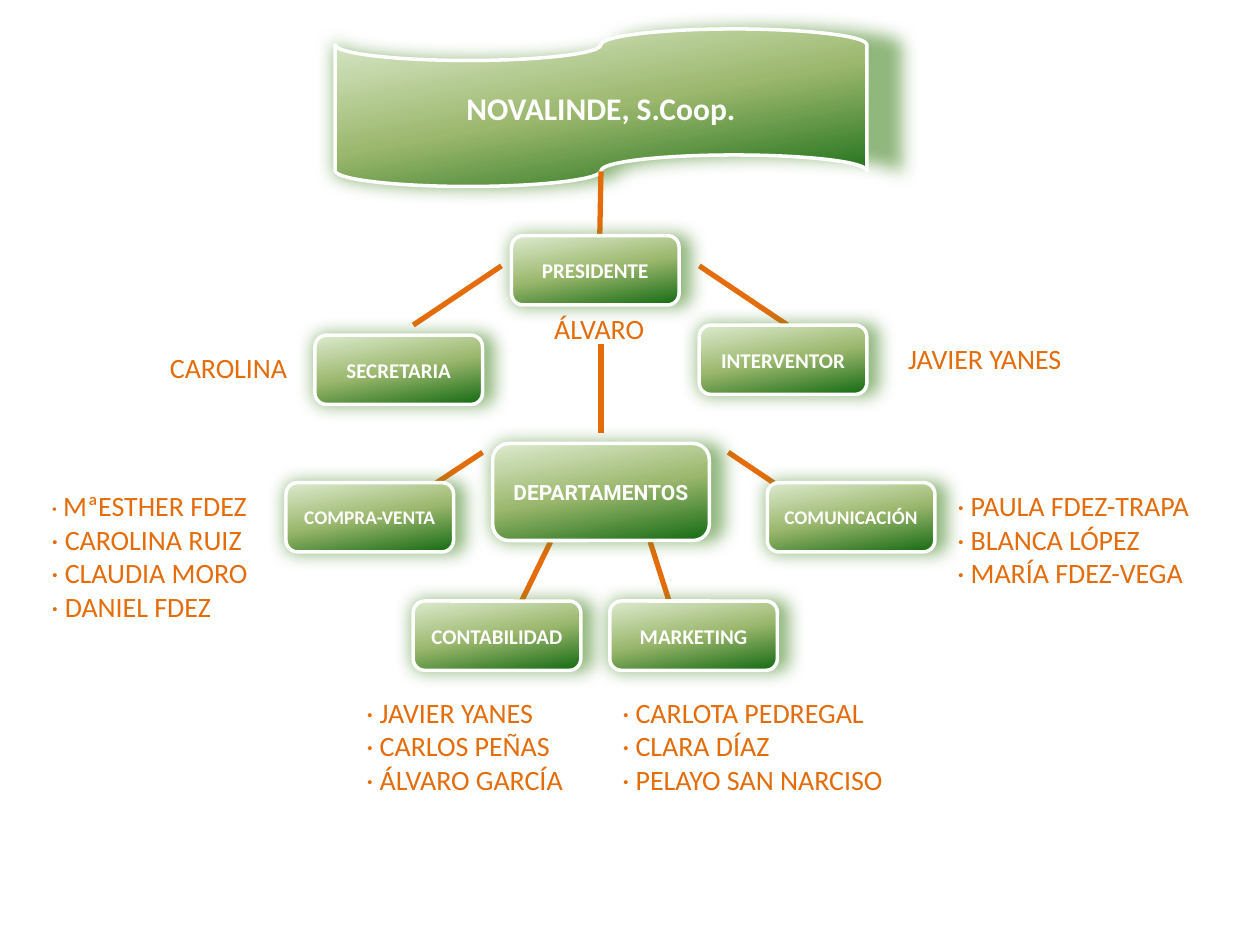
import copy

import pptx
import pptx.dml.color
import pptx.enum.shapes
import pptx.enum.text
import pptx.oxml
import pptx.oxml.ns
import pptx.util

Inches = pptx.util.Inches
Pt = pptx.util.Pt
RGBColor = pptx.dml.color.RGBColor
Shapes = pptx.enum.shapes.MSO_SHAPE

WHITE = RGBColor(0xFF, 0xFF, 0xFF)
ORANGE = RGBColor(0xE4, 0x6C, 0x0A)
GRADIENT = (
    (0, RGBColor(0xDD, 0xEB, 0xCF)),
    (0.5, RGBColor(0x9C, 0xB8, 0x6E)),
    (1, RGBColor(0x15, 0x6B, 0x13)),
)
GLOW = RGBColor(0x4C, 0x8B, 0x2D)

POST_SIZE = (1.33, 0.55)
POSTS = (
    ("PRESIDENTE", 4.06, 1.87, 12),
    ("INTERVENTOR", 5.55, 2.58, 12),
    ("SECRETARIA", 2.5, 2.66, 12),
    ("COMPRA-VENTA", 2.27, 3.83, 11),
    ("COMUNICACIÓN", 6.09, 3.83, 11),
    ("MARKETING", 4.84, 4.77, 12),
    ("CONTABILIDAD", 3.28, 4.77, 12),
)
LINKS = (
    (4.77, 1.36, 4.76, 1.88),
    (3.98, 2.11, 3.28, 2.58),
    (5.55, 2.11, 6.25, 2.58),
    (4.77, 2.73, 4.77, 3.44),
    (5.78, 3.59, 6.48, 4.06),
    (3.83, 3.59, 3.12, 4.06),
    (4.37, 4.3, 4.14, 4.77),
    (5.16, 4.3, 5.31, 4.77),
)
HOLDERS = (
    ("ÁLVARO", 4.3, 2.42, 1.17),
    ("JAVIER YANES", 7.11, 2.66, 1.44),
    ("CAROLINA", 1.25, 2.73, 1.15),
)
TEAMS = (
    (0.31, 3.83, 1.88, 14,
     ("MªESTHER FDEZ", "CAROLINA RUIZ", "CLAUDIA MORO", "DANIEL FDEZ")),
    (7.5, 3.83, 2.34, 16, ("PAULA FDEZ-TRAPA", "BLANCA LÓPEZ", "MARÍA FDEZ-VEGA")),
    (2.81, 5.47, 2.03, 16, ("JAVIER YANES", "CARLOS PEÑAS", "ÁLVARO GARCÍA")),
    (4.84, 5.47, 2.81, 16, ("CARLOTA PEDREGAL", "CLARA DÍAZ", "PELAYO SAN NARCISO")),
)


class OrganizationChart:
    """Draws the green boxes, orange links and names of an organization chart."""

    def __init__(self, slide):
        self.slide = slide
        self.font = "Calibri"
        self.name_size = 16

    def run(self, paragraph, text, size, color, bold=False, font=None):
        run = paragraph.add_run()
        run.text = text
        run.font.name = font or self.font
        run.font.size = Pt(size)
        run.font.bold = bold
        run.font.color.rgb = color

    def box(self, kind, text, left, top, width, height, size, font=None):
        shape = self.slide.shapes.add_shape(
            kind, Inches(left), Inches(top), Inches(width), Inches(height))
        self.gradient(shape)
        shape.line.color.rgb = WHITE
        shape.line.width = Pt(2)
        self.glow(shape)
        frame = shape.text_frame
        frame.word_wrap = True
        frame.vertical_anchor = pptx.enum.text.MSO_ANCHOR.MIDDLE
        paragraph = frame.paragraphs[0]
        paragraph.alignment = pptx.enum.text.PP_ALIGN.CENTER
        self.run(paragraph, text, size, WHITE, True, font)

    def gradient(self, shape):
        shape.fill.gradient()
        shape.fill.gradient_angle = 360 - 80
        stops = shape._element.spPr.find(".//" + pptx.oxml.ns.qn("a:gsLst"))
        stops.append(copy.deepcopy(stops[0]))
        for stop, (position, color) in zip(shape.fill.gradient_stops, GRADIENT):
            stop.position = position
            stop.color.rgb = color

    def glow(self, shape):
        shape.shadow.inherit = False
        effects = shape._element.spPr.find(pptx.oxml.ns.qn("a:effectLst"))
        effects.append(pptx.oxml.parse_xml(
            f'<a:outerShdw {pptx.oxml.ns.nsdecls("a")} blurRad="{Pt(10)}" dist="0" '
            'dir="18900000" sx="106000" algn="l" rotWithShape="0">'
            f'<a:srgbClr val="{GLOW}"><a:alpha val="61000"/></a:srgbClr></a:outerShdw>'))

    def link(self, *ends):
        connector = self.slide.shapes.add_connector(
            pptx.enum.shapes.MSO_CONNECTOR.STRAIGHT, *map(Inches, ends))
        connector.line.color.rgb = ORANGE
        connector.line.width = Pt(3)
        connector._element.spPr.append(pptx.oxml.parse_xml(
            f'<a:effectLst {pptx.oxml.ns.nsdecls("a")}/>'))

    def text_frame(self, left, top, width, height, wrap):
        shape = self.slide.shapes.add_textbox(
            Inches(left), Inches(top), Inches(width), Inches(height))
        shape.text_frame.word_wrap = wrap
        return shape.text_frame

    def holder(self, name, left, top, width):
        frame = self.text_frame(left, top, width, 0.37, False)
        self.run(frame.paragraphs[0], name, self.name_size, ORANGE)

    def team(self, left, top, width, first_dot_size, names):
        frame = self.text_frame(left, top, width, 0.1 + 0.27 * len(names), True)
        for index, name in enumerate(names):
            paragraph = frame.add_paragraph() if index else frame.paragraphs[0]
            dot_size = self.name_size if index else first_dot_size
            self.run(paragraph, "· ", dot_size, ORANGE)
            self.run(paragraph, name, self.name_size, ORANGE)


def main():
    presentation = pptx.Presentation()
    presentation.slide_width = Inches(10)
    presentation.slide_height = Inches(7.5)
    slide = presentation.slides.add_slide(presentation.slide_layouts[6])
    chart = OrganizationChart(slide)
    chart.box(Shapes.FLOWCHART_PUNCHED_TAPE, "NOVALINDE, S.Coop.",
              2.66, 0.23, 4.22, 1.25, 18)
    for link in LINKS:
        chart.link(*link)
    chart.box(Shapes.ROUNDED_RECTANGLE, "DEPARTAMENTOS",
              3.91, 3.52, 1.72, 0.77, 12, "Roboto")
    for title, left, top, size in POSTS:
        chart.box(Shapes.ROUNDED_RECTANGLE, title, left, top, *POST_SIZE, size)
    for holder in HOLDERS:
        chart.holder(*holder)
    for team in TEAMS:
        chart.team(*team)
    presentation.save("out.pptx")


if __name__ == "__main__":
    main()
